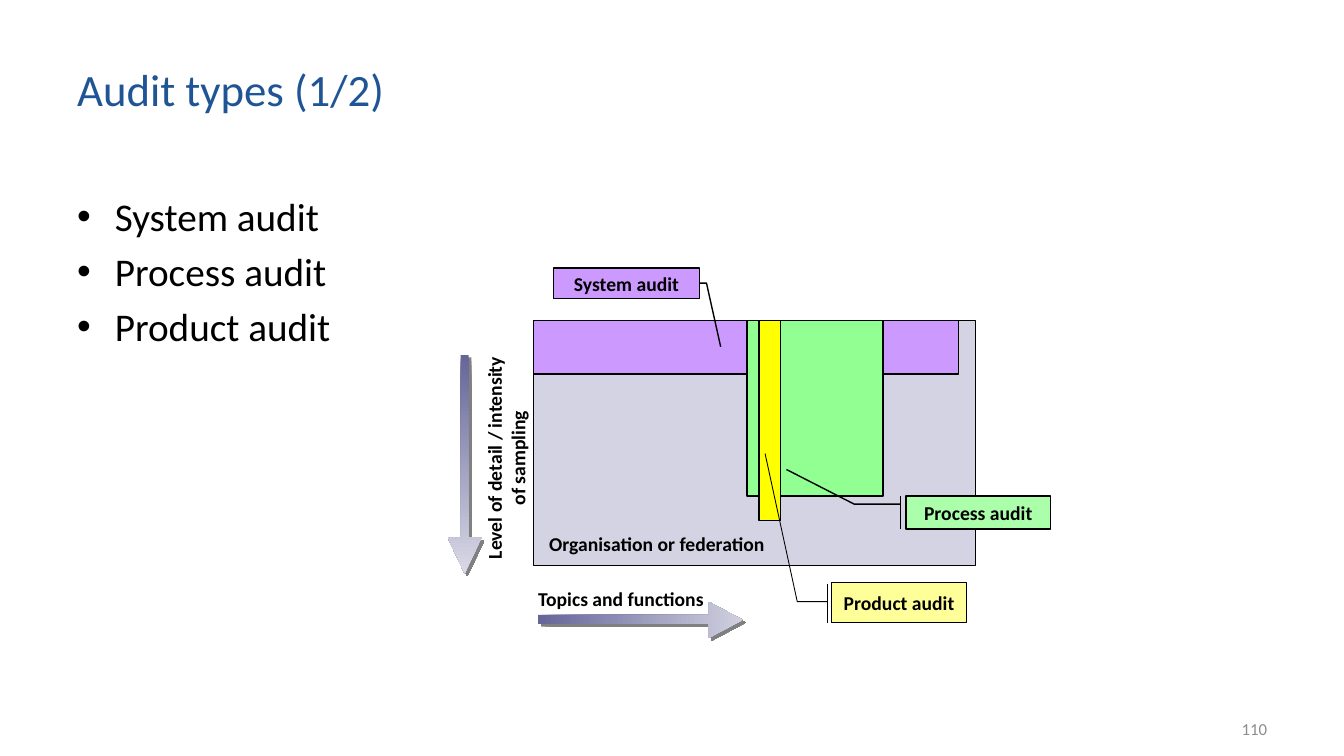
"""Build the slide on audit types with its scope diagram."""
from dataclasses import dataclass

import lxml.etree
import pptx
import pptx.dml.color
import pptx.enum.dml
import pptx.enum.shapes
import pptx.enum.text
import pptx.oxml.ns
import pptx.util

Pt = pptx.util.Pt
ALIGN = pptx.enum.text.PP_ALIGN
ANCHOR = pptx.enum.text.MSO_ANCHOR
SHAPE = pptx.enum.shapes.MSO_SHAPE
FONT = "Calibri"
BLACK = "000000"
DIAGRAM_TOP = 229


@dataclass
class Text:
    box: tuple[float, float, float, float]
    lines: list[str]
    size: float = 14
    color: str = BLACK
    bold: bool = True
    align: ALIGN = ALIGN.LEFT
    anchor: ANCHOR = ANCHOR.TOP
    wrap: bool = True
    rotation: float = 0
    bullet: bool = False


@dataclass
class Box:
    box: tuple[float, float, float, float]
    fill: str
    label: str = ""
    line: float = 1
    inset: float = 0
    shape: SHAPE = SHAPE.RECTANGLE
    adjustments: tuple[float, ...] = ()


@dataclass
class Leader:
    points: list[tuple[float, float]]
    line: float


@dataclass
class Arrow:
    points: list[tuple[float, float]]
    end_color: str
    angle: float


TEXTS = [
    Text((48, 21.6, 713.5, 82.8), ["Audit types (1/2)"], 32, "205595", False, anchor=ANCHOR.MIDDLE),
    Text((48, 133.9, 864, 364.3), ["System audit", "Process audit", "Product audit"], 28,
         bold=False, bullet=True),
    Text((688.3, 506.2, 223.9, 28.8), ["110"], 12, "8C8C8C", False, ALIGN.RIGHT, ANCHOR.MIDDLE),
]
SCOPES = [
    Box((380.9, DIAGRAM_TOP, 316.1, 175), "D3D3E3"),
    Box((380.9, DIAGRAM_TOP, 303.8, 38.2), "CC99FF"),
    Box((533.5, DIAGRAM_TOP, 97.2, 125.3), "91FF91"),
    Box((542.2, DIAGRAM_TOP, 15.1, 142.6), "FFFF00"),
]
LEADERS = [
    Leader([(514.8, 247.7), (504.7, 202.3), (495.4, 202.3)], 1),
    Leader([(546.5, 324), (569.5, 429.8), (591.1, 429.8)], 0.62),
]
ARROWS = [
    Arrow([(319.7, 383.8), (329, 383.8), (329, 253.4), (334.8, 253.4), (334.8, 383.8),
           (344.2, 383.8), (331.9, 409.7)], "D9D9E6", 270),
    Arrow([(506.2, 455.8), (506.2, 445.7), (384.5, 445.7), (384.5, 439.2), (506.2, 439.2),
           (506.2, 429.8), (530.6, 442.8)], "D0D0E0", 0),
]
AXIS_TEXTS = [
    Text((385.2, 376.6, 168.5, 23.8), ["Organisation or federation"], wrap=False),
    Text((377.3, 415.4, 154.8, 23.8), ["Topics and functions"]),
    Text((278.6, 306.7, 165.6, 41), ["Level of detail / intensity of sampling"],
         align=ALIGN.CENTER, rotation=270),
]
LABELS = [
    Box((395.3, 191.5, 104.4, 21.6), "CC99FF", "System audit"),
    Box((594, 416.2, 96.5, 28.8), "FFFF99", "Product audit", 0.75),
    Box((647.3, 354.2, 103, 23.8), "ABFFAB", "Process audit", inset=3.6,
        shape=SHAPE.LINE_CALLOUT_2_BORDER_AND_ACCENT_BAR,
        adjustments=(0.25, -0.04, 0.25, -0.36, -0.79, -0.83)),
]


def rgb(color: str) -> pptx.dml.color.RGBColor:
    """Turn a hex string into a colour."""
    return pptx.dml.color.RGBColor.from_string(color)


def add_run(p, text: str, size: float, color: str, bold: bool) -> None:
    """Add one formatted run to a paragraph."""
    r = p.add_run()
    r.text = text
    r.font.name = FONT
    r.font.size = Pt(size)
    r.font.bold = bold
    r.font.color.rgb = rgb(color)


def set_line(sp, width: float) -> None:
    """Give a shape a black line."""
    sp.line.color.rgb = rgb(BLACK)
    sp.line.width = Pt(width)


def add_bullet(p) -> None:
    """Give a paragraph a hanging round bullet."""
    pPr = p._p.get_or_add_pPr()
    pPr.set("marL", str(Pt(27)))
    pPr.set("indent", str(-Pt(27)))
    font = lxml.etree.SubElement(pPr, pptx.oxml.ns.qn("a:buFont"))
    font.set("typeface", "Arial")
    char = lxml.etree.SubElement(pPr, pptx.oxml.ns.qn("a:buChar"))
    char.set("char", "•")


def draw_text(s, text: Text) -> None:
    """Draw a text box."""
    sp = s.shapes.add_textbox(*map(Pt, text.box))
    sp.rotation = text.rotation
    tf = sp.text_frame
    tf.word_wrap = text.wrap
    tf.vertical_anchor = text.anchor
    for i, line in enumerate(text.lines):
        p = tf.paragraphs[0] if i == 0 else tf.add_paragraph()
        p.alignment = text.align
        if text.bullet:
            add_bullet(p)
        if i:
            p.space_before = Pt(0.2 * text.size)
        add_run(p, line, text.size, text.color, text.bold)


def draw_box(s, box: Box) -> None:
    """Draw a filled box with an optional centred label."""
    sp = s.shapes.add_shape(box.shape, *map(Pt, box.box))
    sp.shadow.inherit = False
    for i, value in enumerate(box.adjustments):
        sp.adjustments[i] = value
    sp.fill.solid()
    sp.fill.fore_color.rgb = rgb(box.fill)
    set_line(sp, box.line)
    if box.label:
        tf = sp.text_frame
        tf.word_wrap = True
        tf.vertical_anchor = ANCHOR.MIDDLE
        tf.margin_left = tf.margin_right = Pt(2 * box.inset)
        tf.margin_top = tf.margin_bottom = Pt(box.inset)
        p = tf.paragraphs[0]
        p.alignment = ALIGN.CENTER
        add_run(p, box.label, 14, BLACK, True)


def add_outline(s, points: list[tuple[float, float]], close: bool):
    """Add a freeform through the given points."""
    first, *rest = [(Pt(x), Pt(y)) for x, y in points]
    builder = s.shapes.build_freeform(*first)
    builder.add_line_segments(rest, close=close)
    sp = builder.convert_to_shape()
    sp.shadow.inherit = False
    return sp


def draw_leader(s, leader: Leader) -> None:
    """Draw a bent leader line."""
    sp = add_outline(s, leader.points, False)
    sp.fill.background()
    set_line(sp, leader.line)


def draw_arrow(s, arrow: Arrow) -> None:
    """Draw a gradient block arrow with a hard shadow."""
    sp = add_outline(s, arrow.points, True)
    sp.line.fill.background()
    sp.fill.gradient()
    sp.fill.gradient_angle = arrow.angle
    for stop, color, position in zip(sp.fill.gradient_stops, ("656599", arrow.end_color), (0, 1)):
        stop.color.rgb = rgb(color)
        stop.position = position
    effects = sp._element.spPr.find(pptx.oxml.ns.qn("a:effectLst"))
    shadow = lxml.etree.SubElement(effects, pptx.oxml.ns.qn("a:outerShdw"))
    for name, value in {"dist": Pt(2.8), "dir": 45 * 60000, "algn": "ctr", "rotWithShape": 0}.items():
        shadow.set(name, str(value))
    lxml.etree.SubElement(shadow, pptx.oxml.ns.qn("a:srgbClr")).set("val", "808080")


def draw_bar(s, x: float, top: float, bottom: float) -> None:
    """Draw the accent bar beside the product label."""
    sp = s.shapes.add_connector(pptx.enum.shapes.MSO_CONNECTOR.STRAIGHT, *map(Pt, (x, top, x, bottom)))
    set_line(sp, 0.62)
    lxml.etree.SubElement(sp._element.spPr, pptx.oxml.ns.qn("a:effectLst"))


def main() -> None:
    """Build and save the slide."""
    prs = pptx.Presentation()
    prs.slide_width, prs.slide_height = Pt(960), Pt(540)
    s = prs.slides.add_slide(prs.slide_layouts[6])
    for draw, items in ((draw_text, TEXTS), (draw_box, SCOPES), (draw_leader, LEADERS),
                        (draw_arrow, ARROWS), (draw_text, AXIS_TEXTS), (draw_box, LABELS)):
        for item in items:
            draw(s, item)
    draw_bar(s, 591.1, 416.9, 445)
    prs.save("out.pptx")


if __name__ == "__main__":
    main()
